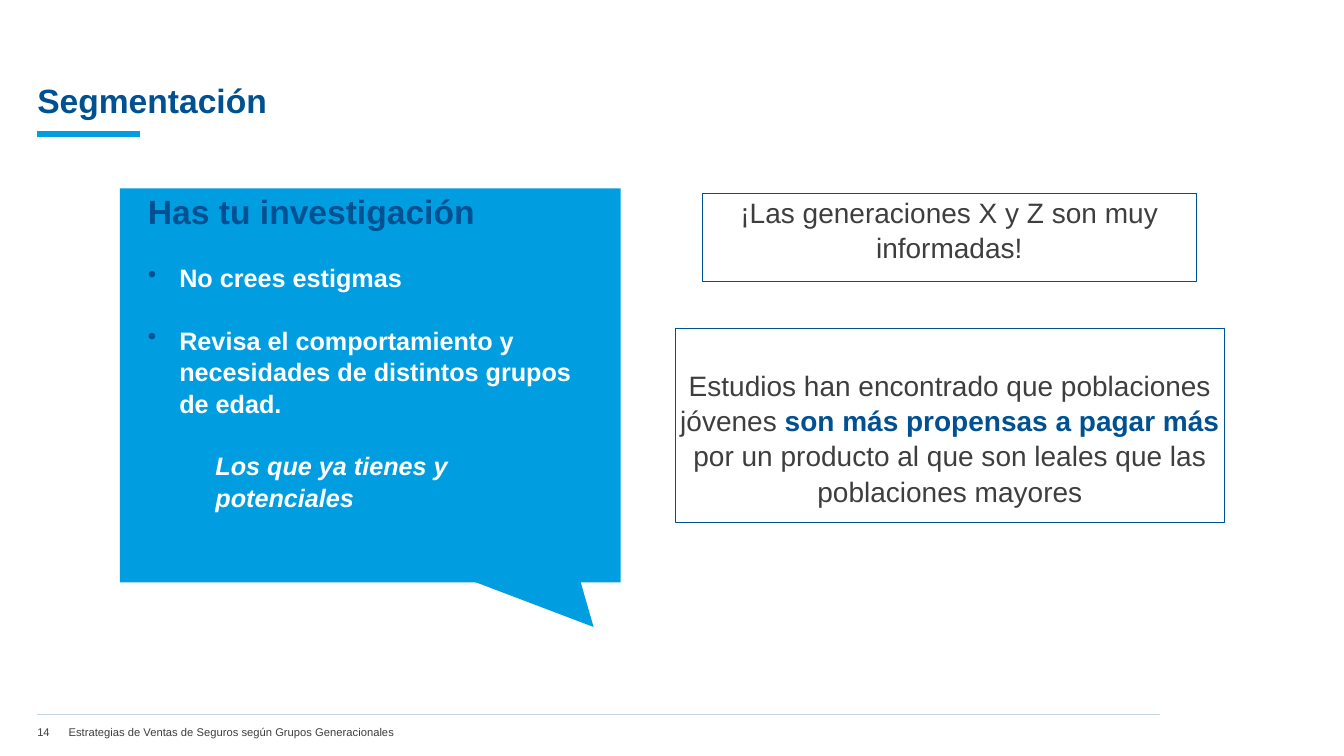
from dataclasses import dataclass

import pptx
import pptx.dml.color
import pptx.enum.shapes
import pptx.enum.text
import pptx.oxml.xmlchemy
import pptx.util

Cm = pptx.util.Cm
Pt = pptx.util.Pt
Align = pptx.enum.text.PP_ALIGN
Anchor = pptx.enum.text.MSO_ANCHOR
make_element = pptx.oxml.xmlchemy.OxmlElement


@dataclass(frozen=True)
class Theme:
    font: str = "Arial"
    navy: str = "005192"
    sky: str = "009EE0"
    grey: str = "3E3E3E"
    rule: str = "C6D2D9"
    white: str = "FFFFFF"
    title_size: float = 24
    statement_size: float = 20
    bullet_size: float = 18
    footer_size: float = 8
    line_spacing: float = 1.05
    gap: float = 21.7


THEME = Theme()


def color(value):
    return pptx.dml.color.RGBColor.from_string(value)


def apply(target, values):
    for name, value in values.items():
        setattr(target, name, value)


def prepare_frame(shape, anchor=Anchor.TOP, left=0, top=0, right=0, bottom=0):
    frame = shape.text_frame
    apply(frame, {
        "word_wrap": True,
        "vertical_anchor": anchor,
        "margin_left": Cm(left),
        "margin_top": Cm(top),
        "margin_right": Cm(right),
        "margin_bottom": Cm(bottom),
    })
    return frame


def add_run(paragraph, text, size, ink, bold=False, italic=False):
    run = paragraph.add_run()
    run.text = text
    apply(run.font, {"name": THEME.font, "size": Pt(size), "bold": bold, "italic": italic})
    run.font.color.rgb = color(ink)


def add_label(slide, box, text, size, ink, bold=False, **frame_values):
    shape = slide.shapes.add_textbox(*map(Cm, box))
    frame = prepare_frame(shape, **frame_values)
    add_run(frame.paragraphs[0], text, size, ink, bold)


def add_rule(slide, left, top, width, ink, weight):
    line = slide.shapes.add_connector(
        pptx.enum.shapes.MSO_CONNECTOR.STRAIGHT, Cm(left), Cm(top), Cm(left + width), Cm(top))
    line.line.color.rgb = color(ink)
    line.line.width = Pt(weight)
    line._element.spPr.append(make_element("a:effectLst"))


def fill_plain(shape, ink):
    shape.shadow.inherit = False
    shape.fill.solid()
    shape.fill.fore_color.rgb = color(ink)
    shape.line.fill.background()


def indent(paragraph, left, bullet=False):
    properties = paragraph._p.get_or_add_pPr()
    properties.set("marL", str(Cm(left)))
    properties.set("indent", str(-Cm(left) if bullet else 0))
    if bullet:
        bullet_color = make_element("a:buClr")
        ink = make_element("a:srgbClr")
        ink.set("val", THEME.navy)
        bullet_color.append(ink)
        character = make_element("a:buChar")
        character.set("char", "•")
        properties.append(bullet_color)
        properties.append(character)


def add_heading(slide, box):
    left, top, width, height = box
    add_label(slide, box, "Segmentación", THEME.title_size, THEME.navy,
              bold=True, anchor=Anchor.BOTTOM, bottom=0.1)
    add_rule(slide, left, top + height + 0.26, 2.6, THEME.sky, 4.5)


def add_research_callout(slide, box):
    left, top, width, height = box
    panel = slide.shapes.add_shape(pptx.enum.shapes.MSO_SHAPE.RECTANGLE, *map(Cm, box))
    fill_plain(panel, THEME.sky)

    tail_top = top + height - 0.2
    start, *others = [
        (Cm(left + across), Cm(tail_top + down))
        for across, down in ((8.46, 0), (11.56, 0), (11.94, 1.32))
    ]
    builder = slide.shapes.build_freeform(*start)
    builder.add_line_segments(others, close=True)
    fill_plain(builder.convert_to_shape(), THEME.sky)

    frame = prepare_frame(panel, left=0.71, right=0.71)
    heading = frame.paragraphs[0]
    apply(heading, {"alignment": Align.LEFT, "line_spacing": THEME.line_spacing})
    add_run(heading, "Has tu investigación", THEME.title_size, THEME.navy, True)

    points = (
        ("No crees estigmas", 0.79, True),
        ("Revisa el comportamiento y necesidades de distintos grupos de edad.", 0.79, True),
        ("Los que ya tienes y potenciales", 1.7, False),
    )
    for text, margin, bullet in points:
        paragraph = frame.add_paragraph()
        apply(paragraph, {
            "alignment": Align.LEFT,
            "line_spacing": THEME.line_spacing,
            "space_before": Pt(THEME.gap),
        })
        indent(paragraph, margin, bullet)
        add_run(paragraph, text, THEME.bullet_size, THEME.white, True, not bullet)


def add_statement(slide, box, parts, top_inset=0):
    shape = slide.shapes.add_shape(pptx.enum.shapes.MSO_SHAPE.RECTANGLE, *map(Cm, box))
    shape.shadow.inherit = False
    shape.fill.background()
    shape.line.color.rgb = color(THEME.navy)
    shape.line.width = Pt(0.75)
    paragraph = prepare_frame(shape, top=top_inset).paragraphs[0]
    apply(paragraph, {"alignment": Align.CENTER, "line_spacing": THEME.line_spacing})
    for text, strong in parts:
        add_run(paragraph, text, THEME.statement_size,
                THEME.navy if strong else THEME.grey, strong)


def add_footer(slide, box):
    left, top, width, height = box
    number_width = 0.79
    add_rule(slide, left, top - 0.13, width, THEME.rule, 0.75)
    add_label(slide, (left, top, number_width, height), "14",
              THEME.footer_size, THEME.grey, anchor=Anchor.MIDDLE)
    add_label(slide, (left + number_width, top, width - number_width, height),
              "Estrategias de Ventas de Seguros según Grupos Generacionales",
              THEME.footer_size, THEME.grey, anchor=Anchor.MIDDLE)


def main():
    presentation = pptx.Presentation()
    apply(presentation, {"slide_width": Cm(33.87), "slide_height": Cm(19.05)})
    slide = presentation.slides.add_slide(presentation.slide_layouts[6])
    add_footer(slide, (0.94, 18.14, 28.3, 0.61))
    add_heading(slide, (0.94, 0.91, 31.98, 2.21))
    add_research_callout(slide, (3.02, 4.75, 12.62, 9.93))
    add_statement(slide, (17.7, 4.88, 12.45, 2.21),
                  [("¡Las generaciones X y Z son muy informadas!", False)])
    add_statement(slide, (17.02, 8.28, 13.84, 4.9), [
        ("Estudios han encontrado que poblaciones jóvenes ", False),
        ("son más propensas a pagar más ", True),
        ("por un producto al que son leales que las poblaciones mayores", False),
    ], top_inset=0.96)
    presentation.save("out.pptx")


if __name__ == "__main__":
    main()
